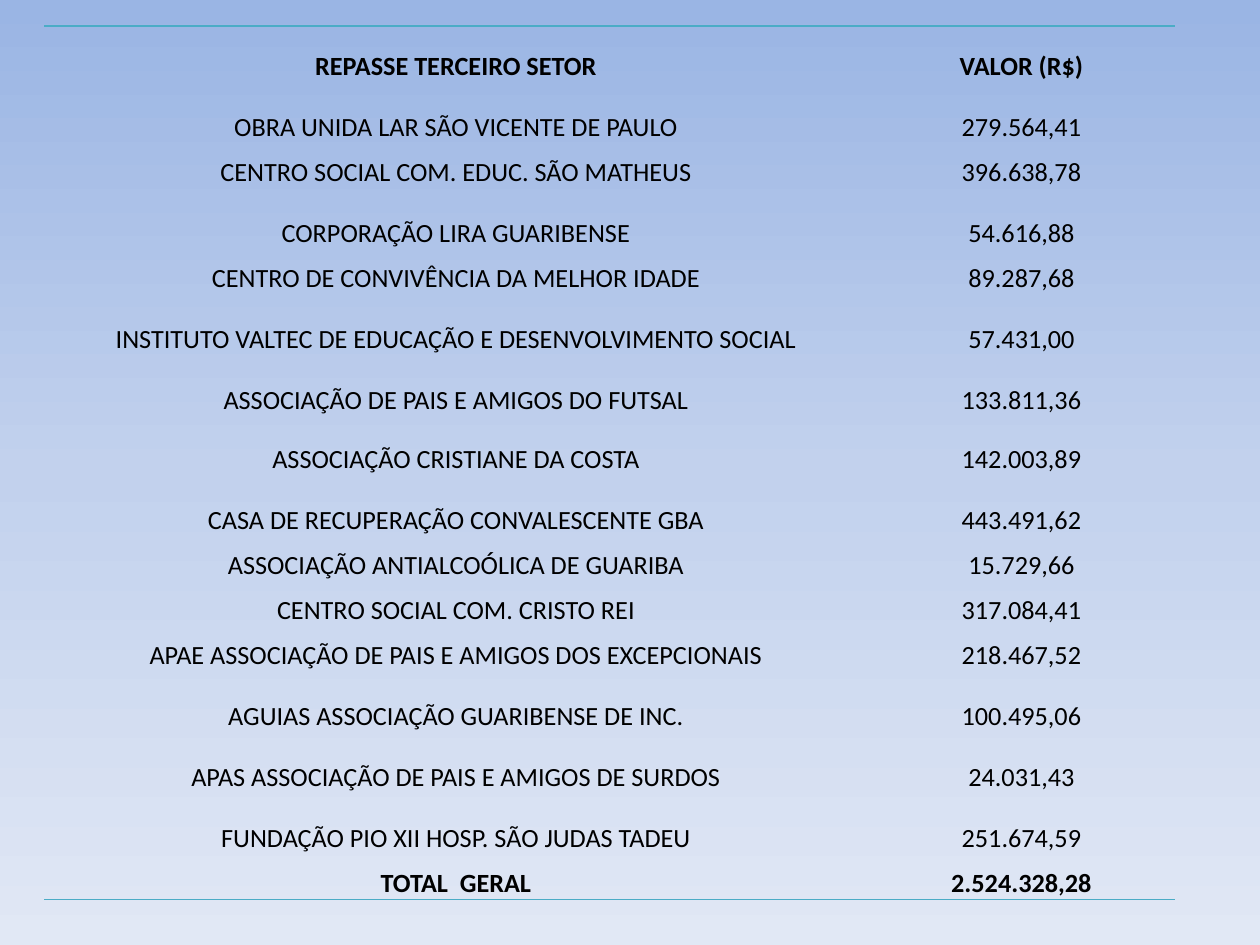
from copy import deepcopy
from typing import NamedTuple

from lxml.etree import SubElement
from pptx import Presentation
from pptx.dml.color import RGBColor
from pptx.enum.text import MSO_ANCHOR as Anchor, PP_ALIGN as Align
from pptx.oxml.ns import qn
from pptx.util import Emu, Pt

PX_PER_INCH = 126
COLORS = {
    "sky_top": "9AB5E4",
    "sky_middle": "C2D1ED",
    "sky_bottom": "E1E8F5",
    "rule": "4BACC6",
    "text": "000000",
}
NO_GRID_STYLE = "{2D5ABB26-0587-4C30-8999-92F81FD0307C}"
TABLE_LEFT, TABLE_TOP = 44, 26
COLUMN_WIDTHS = (824, 307)
SHORT, HEADER, MEDIUM, TALL = 45, 57, 59, 61


class Transfer(NamedTuple):
    entity: str
    amount: str
    height: int = TALL
    bold: bool = False


TRANSFERS = [
    Transfer("REPASSE TERCEIRO SETOR", "VALOR (R$)", HEADER, bold=True),
    Transfer("OBRA UNIDA LAR SÃO VICENTE DE PAULO", "279.564,41"),
    Transfer("CENTRO SOCIAL COM. EDUC. SÃO MATHEUS", "396.638,78", SHORT),
    Transfer("CORPORAÇÃO LIRA GUARIBENSE", "54.616,88"),
    Transfer("CENTRO DE CONVIVÊNCIA DA MELHOR IDADE", "89.287,68", SHORT),
    Transfer("INSTITUTO VALTEC DE EDUCAÇÃO E DESENVOLVIMENTO SOCIAL", "57.431,00"),
    Transfer("ASSOCIAÇÃO DE PAIS E AMIGOS DO FUTSAL", "133.811,36"),
    Transfer("ASSOCIAÇÃO CRISTIANE DA COSTA", "142.003,89", MEDIUM),
    Transfer("CASA DE RECUPERAÇÃO CONVALESCENTE GBA", "443.491,62"),
    Transfer("ASSOCIAÇÃO ANTIALCOÓLICA DE GUARIBA", "15.729,66", SHORT),
    Transfer("CENTRO SOCIAL COM. CRISTO REI", "317.084,41", SHORT),
    Transfer("APAE ASSOCIAÇÃO DE PAIS E AMIGOS DOS EXCEPCIONAIS", "218.467,52", SHORT),
    Transfer("AGUIAS ASSOCIAÇÃO GUARIBENSE DE INC.", "100.495,06"),
    Transfer("APAS ASSOCIAÇÃO DE PAIS E AMIGOS DE SURDOS", "24.031,43"),
    Transfer("FUNDAÇÃO PIO XII HOSP. SÃO JUDAS TADEU", "251.674,59"),
    Transfer("TOTAL  GERAL", "2.524.328,28", SHORT, bold=True),
]


def px(length: int) -> Emu:
    return Emu(round(length * 914400 / PX_PER_INCH))


def paint_background(slide) -> None:
    fill = slide.background.fill
    fill.gradient()
    fill.gradient_angle = 270
    stop_list = next(slide.element.iter(qn("a:gsLst")))
    stop_list.insert(1, deepcopy(stop_list[0]))
    shades = ("sky_top", "sky_middle", "sky_bottom")
    for stop, shade, position in zip(fill.gradient_stops, shades, (0, 0.5, 1)):
        stop.color.rgb = RGBColor.from_string(COLORS[shade])
        stop.position = position


def set_borders(cell, ruled_sides: str) -> None:
    """Rule the sides named by letter (T, B) and clear the others."""
    properties = cell._tc.get_or_add_tcPr()
    for index, side in enumerate("LRTB"):
        border = SubElement(properties, qn(f"a:ln{side}"), w=str(Pt(1)))
        if side in ruled_sides:
            solid = SubElement(border, qn("a:solidFill"))
            SubElement(solid, qn("a:srgbClr"), val=COLORS["rule"])
        else:
            SubElement(border, qn("a:noFill"))
        properties.insert(index, border)


def write(cell, text: str, *, bold: bool = False, size: int = 15,
          font: str = "Calibri", color: str = "text") -> None:
    paragraph = cell.text_frame.paragraphs[0]
    paragraph.alignment = Align.CENTER
    run = paragraph.add_run()
    run.text = text
    run.font.name = font
    run.font.size = Pt(size)
    run.font.bold = bold
    run.font.color.rgb = RGBColor.from_string(COLORS[color])


def add_transfer_table(slide, transfers: list[Transfer]) -> None:
    total_height = sum(transfer.height for transfer in transfers)
    frame = slide.shapes.add_table(
        len(transfers), len(COLUMN_WIDTHS), px(TABLE_LEFT), px(TABLE_TOP),
        px(sum(COLUMN_WIDTHS)), px(total_height))
    table = frame.table
    table.first_row = table.horz_banding = False
    next(table._tbl.iter(qn("a:tableStyleId"))).text = NO_GRID_STYLE
    for column, width in zip(table.columns, COLUMN_WIDTHS):
        column.width = px(width)

    ruled = {0: "T", len(transfers) - 1: "B"}
    for index, (row, transfer) in enumerate(zip(table.rows, transfers)):
        row.height = px(transfer.height)
        for cell, text in zip(row.cells, (transfer.entity, transfer.amount)):
            cell.vertical_anchor = Anchor.BOTTOM
            cell.margin_left = cell.margin_right = cell.margin_top = px(1)
            cell.margin_bottom = 0
            cell.fill.background()
            set_borders(cell, ruled.get(index, ""))
            write(cell, text, bold=transfer.bold)


def main() -> None:
    presentation = Presentation()
    presentation.slide_width = px(1260)
    presentation.slide_height = px(945)
    slide = presentation.slides.add_slide(presentation.slide_layouts[6])
    paint_background(slide)
    add_transfer_table(slide, TRANSFERS)
    presentation.save("out.pptx")


if __name__ == "__main__":
    main()
